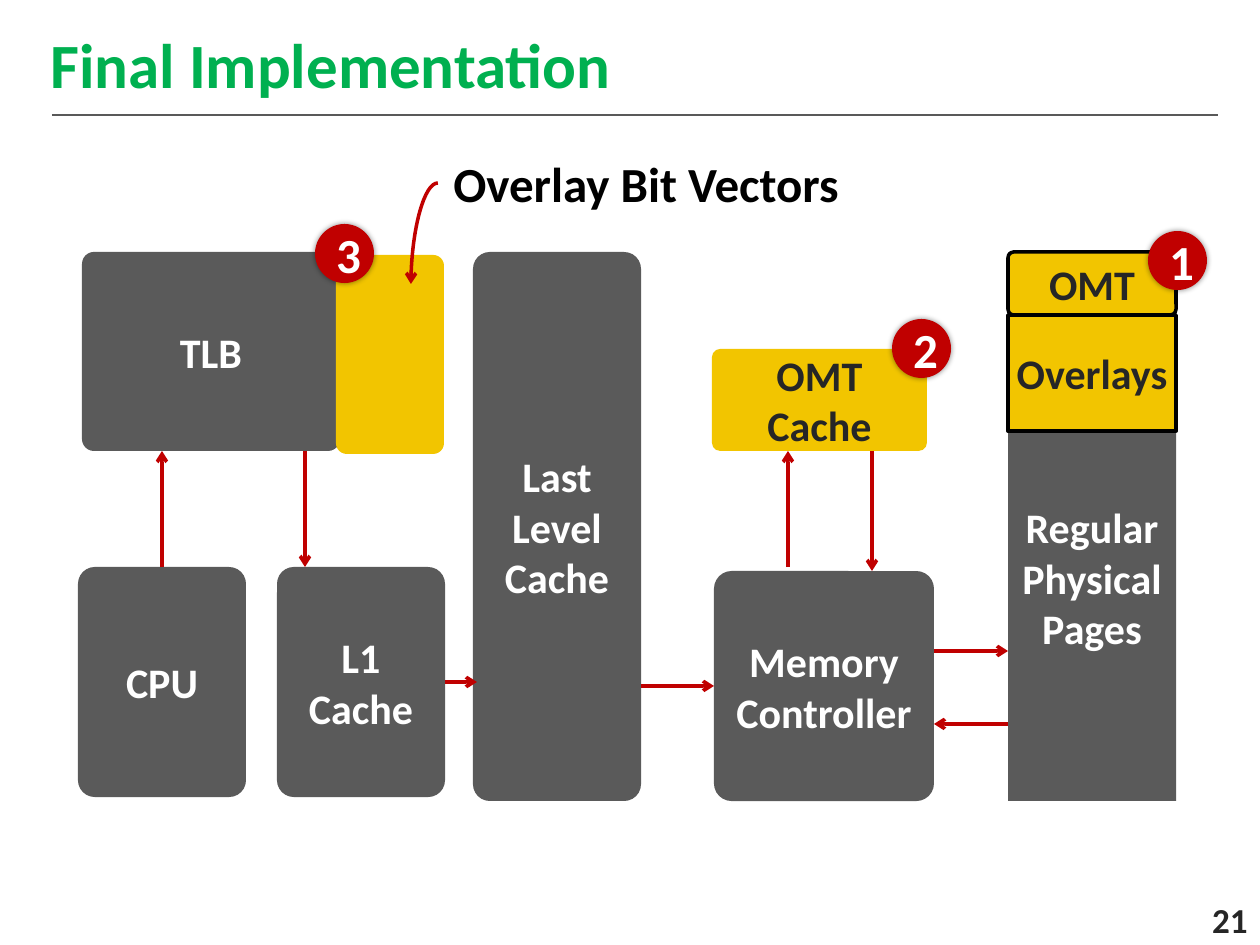
from pptx import Presentation
from pptx import util as u
from pptx.dml.color import RGBColor
from pptx.enum import shapes, text
from pptx.oxml import parse_xml
from pptx.oxml.ns import nsdecls, qn

PX = 914400 / 126
GREEN = RGBColor(0x00, 0xB0, 0x50)
RULE = RGBColor(0x59, 0x59, 0x59)
GRAY = RGBColor(0x5A, 0x5A, 0x5A)
YELLOW = RGBColor(0xF2, 0xC5, 0x00)
RED = RGBColor(0xC0, 0x00, 0x00)
DARK = RGBColor(0x26, 0x26, 0x26)
BLACK = RGBColor(0, 0, 0)
WHITE = RGBColor(0xFF, 0xFF, 0xFF)
ROUND = shapes.MSO_SHAPE.ROUNDED_RECTANGLE
CENTER = text.PP_ALIGN.CENTER


def px(*lengths):
    return [u.Emu(round(length * PX)) for length in lengths]


def write(shape, words, size, color, align):
    frame = shape.text_frame
    frame.text = words
    frame.vertical_anchor = text.MSO_ANCHOR.MIDDLE
    paragraph = frame.paragraphs[0]
    paragraph.alignment = align
    for run in paragraph.runs:
        run.font.name = "Calibri"
        run.font.size = u.Pt(size)
        run.font.bold = True
        run.font.color.rgb = color


prs = Presentation()
prs.slide_width, prs.slide_height = px(1260, 945)
slide = prs.slides.add_slide(prs.slide_layouts[5])

# Title
title = slide.shapes.title
title.left, title.top, title.width, title.height = px(0, 0, 1260, 126)
write(title, "Final Implementation", 36, GREEN, text.PP_ALIGN.LEFT)
title.text_frame.margin_left = u.Inches(0.4)

# Slide number
number = slide.shapes.add_textbox(*px(1155, 895, 105, 50))
number.text_frame.word_wrap = True
write(number, "21", 20, DARK, text.PP_ALIGN.RIGHT)

# Components: name, left, top, width, height, corner, fill, text colour, outlined
components = [
    ("CPU", 78, 567, 168, 230, 0.1, GRAY, WHITE, False),
    ("L1 Cache", 277, 567, 168, 230, 0.1, GRAY, WHITE, False),
    ("Last Level Cache", 473, 252, 168, 549, 0.1, GRAY, WHITE, False),
    ("Regular Physical Pages", 1008, 252, 168, 549, 0, GRAY, WHITE, False),
    ("Memory Controller", 714, 571, 220, 230, 0.08, GRAY, WHITE, False),
    ("TLB", 82, 252, 258, 199, 0.06, GRAY, WHITE, False),
    ("OMT Cache", 712, 349, 215, 102, 0.08, YELLOW, DARK, False),
    ("OMT", 1008, 252, 168, 63, 0.09, YELLOW, DARK, True),
    ("", 336, 255, 108, 199, 0.1, YELLOW, DARK, False),
    ("Overlays", 1008, 315, 168, 116, 0, YELLOW, DARK, True),
]
boxes = {}
for name, left, top, width, height, corner, fill, color, outlined in components:
    box = slide.shapes.add_shape(ROUND, *px(left, top, width, height))
    box.shadow.inherit = False
    box.adjustments[0] = corner
    box.fill.solid()
    box.fill.fore_color.rgb = fill
    if outlined:
        box.line.color.rgb = BLACK
        box.line.width = u.Pt(2)
    else:
        box.line.fill.background()
    if name:
        write(box, name, 24, color, CENTER)
    if left == 1008:  # the memory column has no side margins
        box.text_frame.margin_left = box.text_frame.margin_right = 0
    boxes[name] = box
boxes["Regular Physical Pages"].text_frame.margin_top = px(108)[0]

# Label of the overlay bit vectors
label = slide.shapes.add_textbox(*px(438, 147, 416, 72))
label.text_frame.word_wrap = False
write(label, "Overlay Bit Vectors", 28, BLACK, CENTER)

# Rule under the title and arrows: start, end, curved
title_rule = (52, 115, 1218, 115, False)
arrows = [
    (162, 567, 162, 451, False),
    (305, 451, 305, 567, False),
    (445, 682, 477, 682, False),
    (641, 686, 714, 686, False),
    (788, 567, 788, 451, False),
    (872, 451, 872, 571, False),
    (934, 651, 1008, 651, False),
    (1008, 724, 934, 724, False),
    (438, 183, 411, 284, True),
]
links = []
for x1, y1, x2, y2, curved in [title_rule] + arrows:
    kind = shapes.MSO_CONNECTOR.CURVE if curved else shapes.MSO_CONNECTOR.STRAIGHT
    link = slide.shapes.add_connector(kind, *px(x1, y1, x2, y2))
    is_rule = not links
    link.line.color.rgb = RULE if is_rule else RED
    link.line.width = u.Pt(1.5 if is_rule else 2)
    properties = link._element.spPr
    if not is_rule:
        properties.find(qn("a:ln")).append(
            parse_xml(f'<a:tailEnd {nsdecls("a")} type="arrow"/>'))
    if curved:  # a quarter bend: leaves sideways, arrives downwards
        properties.find(qn("a:prstGeom")).set("prst", "curvedConnector2")
    properties.append(parse_xml(f'<a:effectLst {nsdecls("a")}/>'))
    links.append(link)
links[1].begin_connect(boxes["CPU"], 0)
links[3].begin_connect(boxes["L1 Cache"], 3)
links[4].end_connect(boxes["Memory Controller"], 1)

# Numbered badges
for digit, left, top in [("3", 315, 224), ("1", 1148, 231), ("2", 892, 319)]:
    badge = slide.shapes.add_shape(shapes.MSO_SHAPE.OVAL, *px(left, top, 59, 59))
    badge.fill.solid()
    badge.fill.fore_color.rgb = RED
    badge.line.fill.background()
    badge._element.spPr.append(parse_xml(
        f'<a:effectLst {nsdecls("a")}><a:outerShdw blurRad="{u.Pt(3)}" dist="0" dir="0">'
        '<a:srgbClr val="000000"><a:alpha val="40000"/></a:srgbClr>'
        '</a:outerShdw></a:effectLst>'))
    write(badge, digit, 28, WHITE, CENTER)

prs.save("out.pptx")
